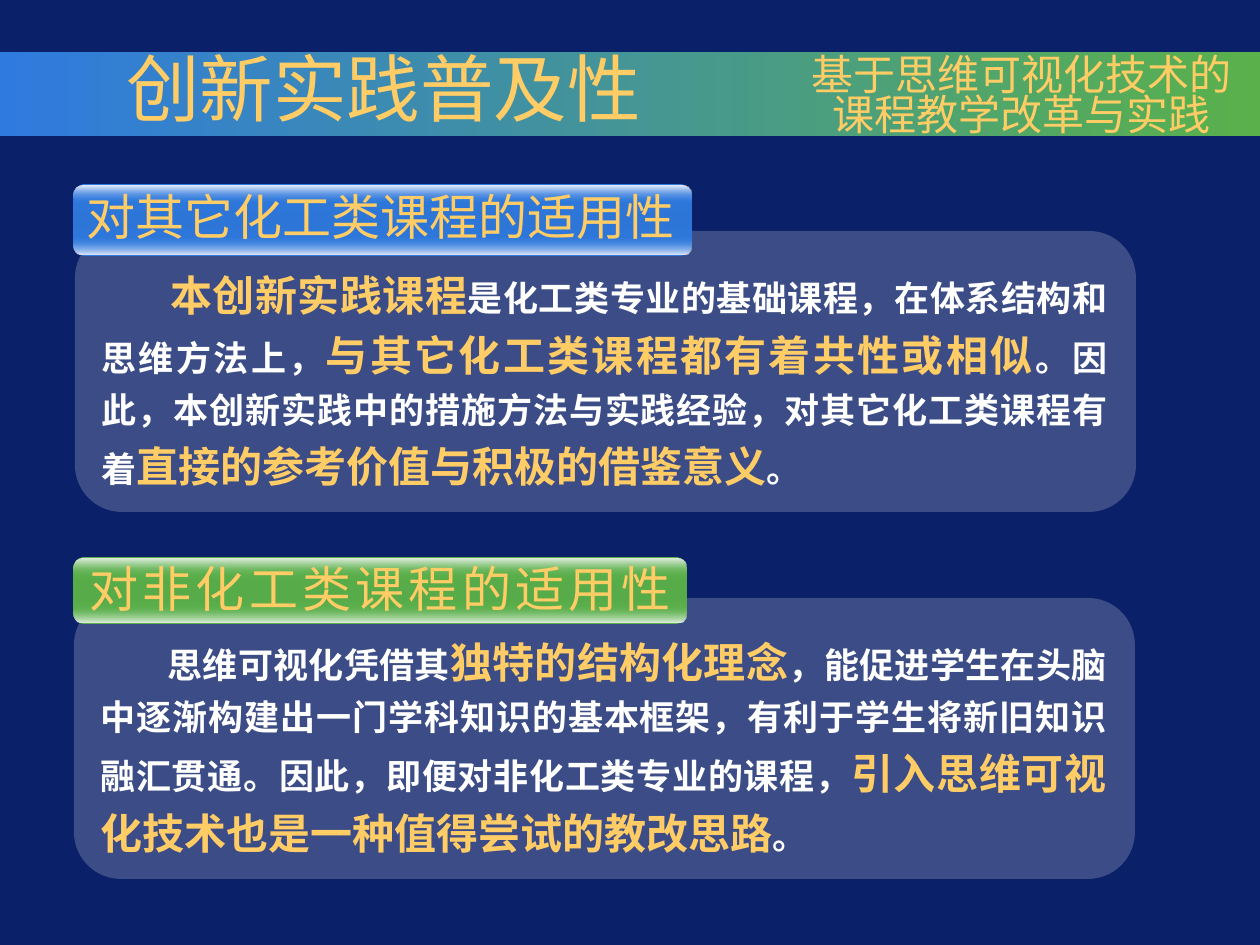
from lxml import etree
from pptx import Presentation
from pptx import util as u
from pptx.dml.color import RGBColor
from pptx.enum import shapes, text
from pptx.oxml import ns

PX = 914400 // 126
GOLD, WHITE, BLUE, GREEN = "FFCC66", "FFFFFF", "2F7ADF", "5AB14B"
CJK = "Noto Sans CJK SC"

presentation = Presentation()
presentation.slide_width, presentation.slide_height = 1260 * PX, 945 * PX
slide = presentation.slides.add_slide(presentation.slide_layouts[6])
slide.background.fill.solid()
slide.background.fill.fore_color.rgb = RGBColor.from_string("0A2068")


def add_box(left, top, width, height, stops, angle=90, radius=None):
    """Each stop is (position %, colour, opacity %); one stop gives a solid fill."""
    kind = shapes.MSO_SHAPE.RECTANGLE if radius is None else shapes.MSO_SHAPE.ROUNDED_RECTANGLE
    shape = slide.shapes.add_shape(kind, left * PX, top * PX, width * PX, height * PX)
    if radius is not None:
        shape.adjustments[0] = radius
    shape.shadow.inherit = False
    shape.line.fill.background()
    if len(stops) == 1:
        shape.fill.solid()
        shape.fill.fore_color.rgb = RGBColor.from_string(stops[0][1])
        colors = [shape.fill._xPr.find(".//" + ns.qn("a:srgbClr"))]
    else:
        shape.fill.gradient()
        shape.fill.gradient_angle = -angle % 360
        stop_list = shape.fill._xPr.find(".//" + ns.qn("a:gsLst"))
        stop_list.clear()
        colors = []
        for position, color, _ in stops:
            stop = etree.SubElement(stop_list, ns.qn("a:gs"), pos=str(position * 1000))
            colors.append(etree.SubElement(stop, ns.qn("a:srgbClr"), val=color))
    for element, (_, _, opacity) in zip(colors, stops):
        if opacity < 100:
            etree.SubElement(element, ns.qn("a:alpha"), val=str(opacity * 1000))


def add_text(left, top, width, height, runs, font=CJK, bold=False, align="LEFT",
             anchor="TOP", line_spacing=None, indent=0, tracking=0):
    """Each run is (text, size, colour); a run of "\\n" breaks the line."""
    shape = slide.shapes.add_textbox(left * PX, top * PX, width * PX, height * PX)
    frame = shape.text_frame
    frame.word_wrap = True
    frame.vertical_anchor = text.MSO_ANCHOR[anchor]
    paragraph = frame.paragraphs[0]
    paragraph.alignment = text.PP_ALIGN[align]
    if line_spacing:
        paragraph.line_spacing = line_spacing
    paragraph_properties = paragraph._p.get_or_add_pPr()
    paragraph_properties.set("indent", str(indent * PX))
    paragraph_properties.set("hangingPunct", "0")
    for content, size, color in runs:
        if content == "\n":
            paragraph.add_line_break()
            continue
        run = paragraph.add_run()
        run.text = content
        run.font.size = u.Pt(size)
        run.font.bold = bold
        run.font.name = font
        run.font.color.rgb = RGBColor.from_string(color)
        properties = run.font._rPr
        etree.SubElement(properties, ns.qn("a:ea"), typeface=CJK)
        if tracking:
            properties.set("spc", str(int(tracking * 100)))


add_box(0, 52, 1260, 84, [(0, BLUE, 100), (100, GREEN, 100)], angle=0)
add_text(114, 48, 600, 78, [("创新实践普及性", 42, GOLD)], anchor="MIDDLE")
add_text(759, 52, 525, 83, [("基于思维可视化技术的", 24, GOLD), ("\n", 24, GOLD),
                            ("课程教学改革与实践", 24, GOLD)],
         align="CENTER", line_spacing=0.8)

course_body = [
    ("本创新实践课程", 24, GOLD),
    ("是化工类专业的基础课程，在体系结构和思维方法上，", 20, WHITE),
    ("与其它化工类课程都有着共性或相似", 24, GOLD),
    ("。因此，本创新实践中的措施方法与实践经验，对其它化工类课程有着", 20, WHITE),
    ("直接的参考价值与积极的借鉴意义", 24, GOLD),
    ("。", 20, WHITE),
]
other_body = [
    ("思维可视化凭借其", 20, WHITE),
    ("独特的结构化理念", 24, GOLD),
    ("，能促进学生在头脑中逐渐构建出一门学科知识的基本框架，有利于学生将新旧知识"
     "融汇贯通。因此，即便对非化工类专业的课程，", 20, WHITE),
    ("引入思维可视化技术也是一种值得尝试的教改思路", 24, GOLD),
    ("。", 20, WHITE),
]

# panel left, panel top, body height, first-line indent, body runs
panels = [(75, 231, 249, 69, course_body), (74, 598, 239, 67, other_body)]
for left, top, body_height, indent, body in panels:
    add_box(left, top, 1061, 281, [(0, WHITE, 20)], radius=0.167)
    add_text(left + 14, top + 22, 1031, body_height, body, font="Times New Roman", bold=True,
             align="JUSTIFY", line_spacing=1.2, indent=indent)

# heading, top, width, height, text top, tracking, edge colour, middle colour, highlights
headings = [
    ("对非化工类课程的适用性", 557, 614, 67, 552, 2.5, GREEN, "57AB48", "E7F0E6", "EAF2E9"),
    ("对其它化工类课程的适用性", 184, 619, 72, 180, 0, BLUE, "2D76D7", "EDF0FA", "E9EDF9"),
]
for heading, top, width, height, text_top, tracking, edge, middle, upper, lower in headings:
    add_box(73, top, width, height, [(0, edge, 100), (50, middle, 100), (100, edge, 100)],
            radius=0.175)
    add_box(74, top + height - 19, width - 2, 17, [(0, edge, 0), (100, lower, 100)], radius=0.5)
    add_box(74, top + 2, width - 2, 17, [(0, upper, 100), (100, edge, 0)], radius=0.5)
    add_text(71, text_top, 619, 70, [(heading, 28, GOLD)], align="CENTER", tracking=tracking)

presentation.save("out.pptx")
